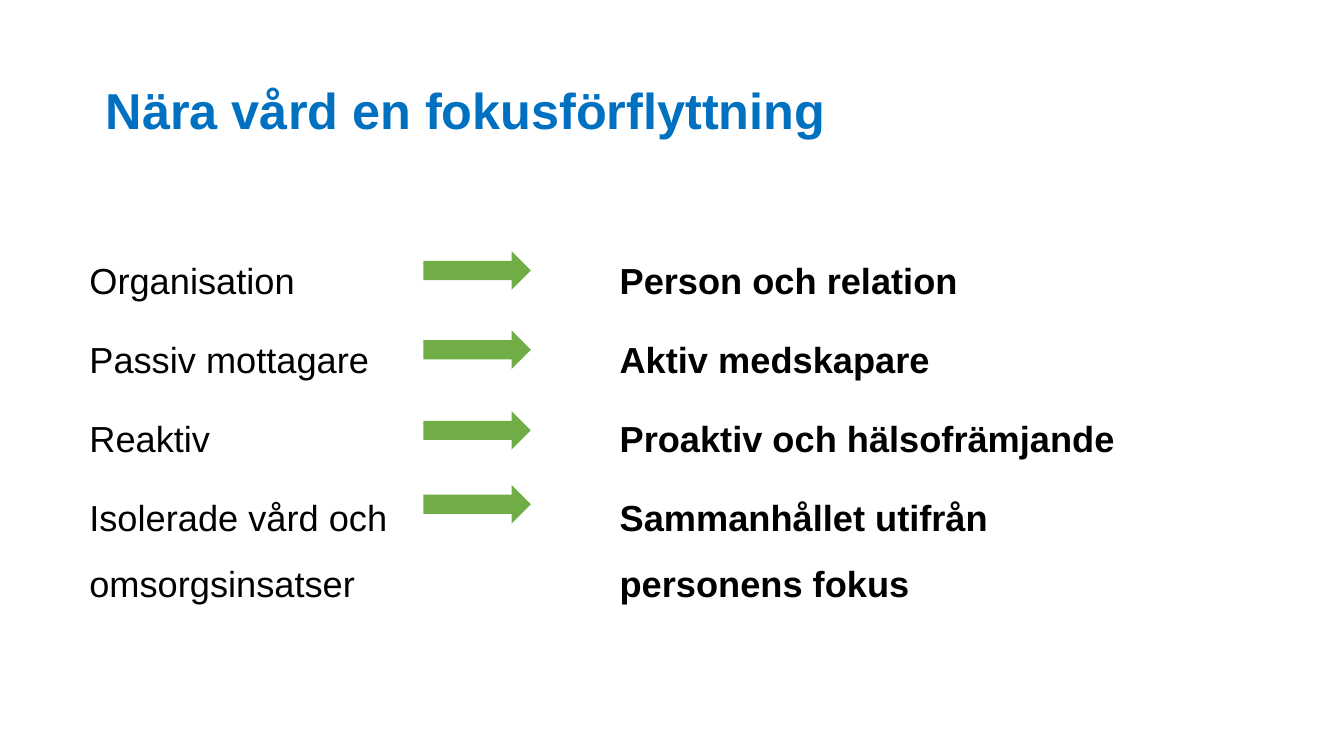
import pptx
import pptx.dml.color
import pptx.enum.shapes
import pptx.enum.text
import pptx.oxml
import pptx.oxml.ns
import pptx.util

BLUE = pptx.dml.color.RGBColor(0x00, 0x70, 0xC0)
GREEN = pptx.dml.color.RGBColor(0x70, 0xAD, 0x47)
BLACK = pptx.dml.color.RGBColor(0x00, 0x00, 0x00)

TITLE = "Nära vård en fokusförflyttning"
FROM = ["Organisation", "Passiv mottagare", "Reaktiv", "Isolerade vård och omsorgsinsatser"]
TO = ["Person och relation", "Aktiv medskapare", "Proaktiv och hälsofrämjande",
      "Sammanhållet utifrån personens fokus"]
ARROW_ROWS = [18.7, 24.6, 30.6, 36.1]


def write(para, text, size=19.4, color=BLACK, bold=False, line=1.5, before=0, indent=0):
    props = para._p.get_or_add_pPr()
    props.set("marL", str(pptx.util.Inches(indent)))
    props.set("indent", "0")
    props.append(pptx.oxml.parse_xml(f"<a:buNone {pptx.oxml.ns.nsdecls('a')}/>"))
    para.alignment = pptx.enum.text.PP_ALIGN.LEFT
    para.line_spacing = line
    para.space_before = pptx.util.Pt(before)
    run = para.add_run()
    run.text = text
    run.font.name = "Arial"
    run.font.size = pptx.util.Pt(size)
    run.font.bold = bold
    run.font.color.rgb = color


class Deck:
    """Holds the style and current slide, on a grid of tenth-inch cells."""

    cell = pptx.util.Inches(0.1)

    def __init__(self, cols, rows):
        self.file = pptx.Presentation()
        self.file.slide_width, self.file.slide_height = self.grid(cols, rows)
        self.slide = self.file.slides.add_slide(self.file.slide_layouts[3])

    def grid(self, *cells):
        return [round(n * self.cell) for n in cells]

    def place(self, index, area, anchor):
        holder = self.slide.placeholders[index]
        holder.left, holder.top, holder.width, holder.height = self.grid(*area)
        frame = holder.text_frame
        frame.auto_size = pptx.enum.text.MSO_AUTO_SIZE.NONE
        frame.vertical_anchor = anchor
        return frame

    def title(self, text, *area):
        frame = self.place(0, area, pptx.enum.text.MSO_ANCHOR.MIDDLE)
        write(frame.paragraphs[0], text, size=27, color=BLUE, bold=True, line=0.9)

    def list(self, index, items, *area, bold=False):
        frame = self.place(index, area, pptx.enum.text.MSO_ANCHOR.TOP)
        for n, item in enumerate(items):
            para = frame.add_paragraph() if n else frame.paragraphs[0]
            write(para, item, bold=bold, before=7.5 if n else 0, indent=0.02)

    def arrow(self, *area):
        kind = pptx.enum.shapes.MSO_SHAPE.RIGHT_ARROW
        shape = self.slide.shapes.add_shape(kind, *self.grid(*area))
        shape.shadow.inherit = False
        shape.fill.solid()
        shape.fill.fore_color.rgb = GREEN
        shape.line.fill.background()


def main():
    deck = Deck(100, 56.25)
    deck.title(TITLE, 6.88, 3, 86.25, 10.9)
    deck.list(1, FROM, 5.45, 17.1, 38.7, 30.7)
    deck.list(2, TO, 44.9, 17.1, 39.4, 30.7, bold=True)
    for row in ARROW_ROWS:
        deck.arrow(31.5, row, 8, 2.85)
    deck.file.save("out.pptx")


if __name__ == "__main__":
    main()
